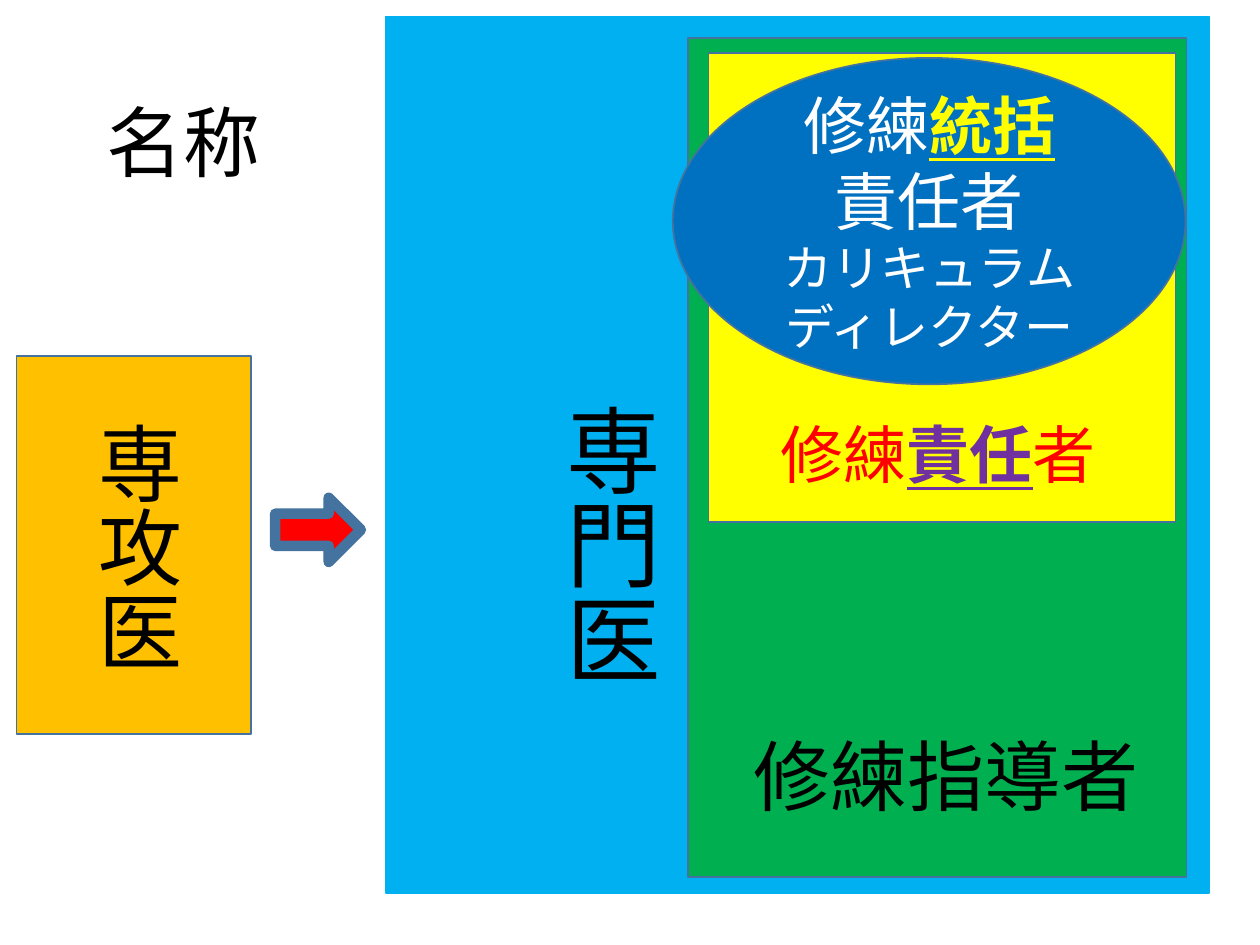
from pptx import Presentation
from pptx.dml.color import RGBColor
from pptx.enum.shapes import MSO_SHAPE as SHAPE
from pptx.enum.text import MSO_ANCHOR as ANCHOR, MSO_AUTO_SIZE as AUTO, PP_ALIGN as ALIGN
from pptx.util import Pt

FONT = "Calibri"
COLORS = {
    "black": "000000", "white": "FFFFFF", "red": "FF0000", "purple": "7030A0",
    "yellow": "FFFF00", "amber": "FFC000", "sky": "00B0F0", "green": "00B050",
    "blue": "0070C0", "outline": "43739E",
}


def rgb(name):
    return RGBColor.from_string(COLORS[name])


def add_run(p, text, size=44, color="black", emphasis=False):
    """Add a run; emphasis makes it bold and underlined."""
    r = p.add_run()
    r.text = text
    font = r.font
    font.name, font.size = FONT, Pt(size)
    font.bold = font.underline = emphasis
    font.color.rgb = rgb(color)


def place(sp, box):
    sp.left, sp.top, sp.width, sp.height = (Pt(v) for v in box)


def add_block(slide, kind, box, fill, line="outline", weight=1):
    sp = slide.shapes.add_shape(kind, *(Pt(v) for v in box))
    sp.shadow.inherit = False
    sp.fill.solid()
    sp.fill.fore_color.rgb = rgb(fill)
    sp.line.color.rgb = rgb(line)
    sp.line.width = Pt(weight)
    return sp


def add_label(slide, box, vertical=False):
    """Add an unwrapped text box and return its first paragraph."""
    tf = slide.shapes.add_textbox(*(Pt(v) for v in box)).text_frame
    tf.word_wrap = False
    tf.auto_size = AUTO.NONE
    if vertical:
        tf._txBody.bodyPr.set("vert", "eaVert")
    return tf.paragraphs[0]


def format_title(slide):
    title = slide.shapes.title
    place(title, (-205.2, 31.7, 620.6, 104.4))
    tf = title.text_frame
    tf.vertical_anchor = ANCHOR.MIDDLE
    p = tf.paragraphs[0]
    p.alignment = ALIGN.CENTER
    p.line_spacing = 0.9
    add_run(p, "名称")


def add_director(slide):
    sp = add_block(slide, SHAPE.OVAL, (384.5, 33.1, 293, 186.5), "blue")
    tf = sp.text_frame
    tf.word_wrap = True
    tf.vertical_anchor = ANCHOR.MIDDLE
    lines = [
        [("修練", 36, "white"), ("統括", 36, "yellow", True)],
        [("責任者", 36, "white")],
        [("カリキュラムディレクター", 28, "white")],
    ]
    for i, runs in enumerate(lines):
        p = tf.add_paragraph() if i else tf.paragraphs[0]
        p.alignment = ALIGN.CENTER
        for run in runs:
            add_run(p, *run)


def main():
    prs = Presentation()
    prs.slide_width, prs.slide_height = Pt(720), Pt(540)
    slide = prs.slides.add_slide(prs.slide_layouts[5])
    format_title(slide)

    add_block(slide, SHAPE.RECTANGLE, (9.4, 203.5, 133.9, 216), "amber")
    add_block(slide, SHAPE.RECTANGLE, (220.5, 9.4, 470.2, 501.1), "sky", line="sky")
    add_run(add_label(slide, (38.2, 234, 72.7, 152.6), vertical=True), "専攻医", size=48)
    add_block(slide, SHAPE.RIGHT_ARROW, (157.2, 284.4, 49, 36.7), "red", weight=6)
    add_run(add_label(slide, (304.6, 223.2, 79.9, 170.6), vertical=True), "専門医", size=54)

    add_block(slide, SHAPE.RECTANGLE, (393, 21.8, 285, 479.5), "green")
    add_block(slide, SHAPE.RECTANGLE, (404.9, 30.4, 266.9, 267.8), "yellow")
    p = add_label(slide, (439.2, 234, 196.6, 94.3))
    add_run(p, "修練", size=36, color="red")
    add_run(p, "責任", size=36, color="purple", emphasis=True)
    add_run(p, "者", size=36, color="red")
    add_director(slide)
    add_run(add_label(slide, (423.4, 412.6, 236.9, 60.5)), "修練指導者")

    prs.save("out.pptx")


if __name__ == "__main__":
    main()
